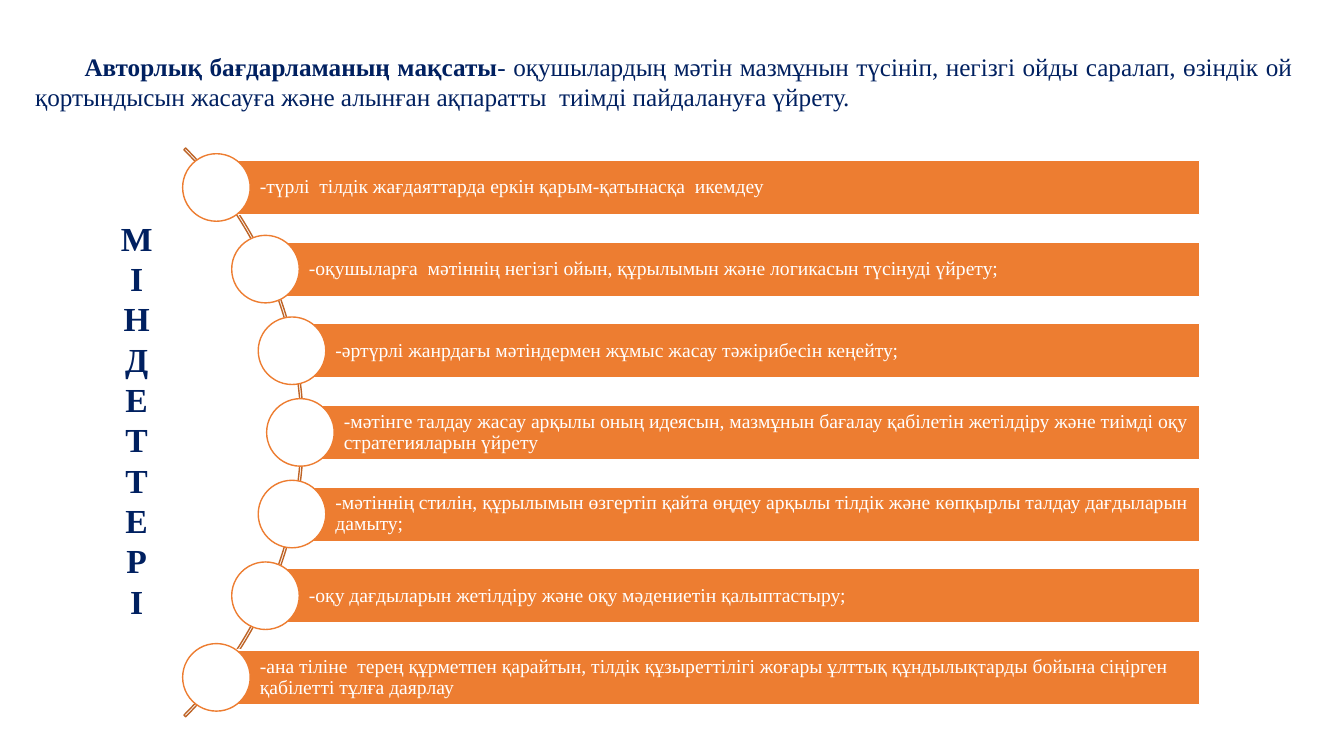
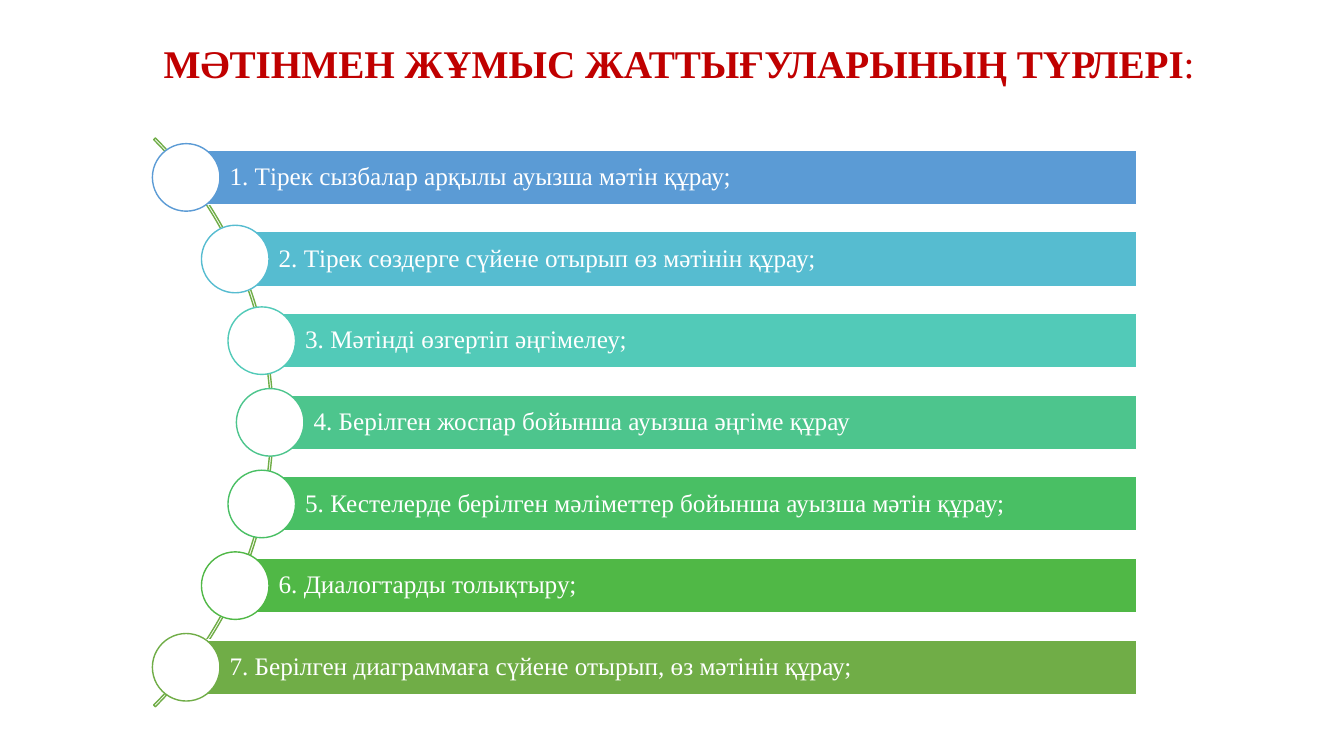
from math import sqrt

from pptx import Presentation
from pptx.dml.color import RGBColor
from pptx.enum.shapes import MSO_SHAPE
from pptx.enum.text import MSO_ANCHOR, PP_ALIGN
from pptx.util import Inches, Pt

FONT = "Times New Roman"
WHITE = RGBColor(0xFF, 0xFF, 0xFF)
NAVY = RGBColor(0x00, 0x20, 0x60)
RED = RGBColor(0xC0, 0x00, 0x00)
ORANGE = RGBColor(0xED, 0x7D, 0x31)
BROWN = RGBColor(0xBE, 0x64, 0x27)
GREEN = RGBColor(0x70, 0xAD, 0x47)
EXERCISE_COLORS = [
    RGBColor(0x5B, 0x9B, 0xD5),
    RGBColor(0x56, 0xBC, 0xD0),
    RGBColor(0x52, 0xCA, 0xB8),
    RGBColor(0x4D, 0xC5, 0x8D),
    RGBColor(0x49, 0xBF, 0x64),
    RGBColor(0x50, 0xB8, 0x46),
    GREEN,
]

ARC_SIZE = 7.98
CURVE_RADIUS = 3.96
ROW_PITCH = 0.81
BAR_HEIGHT = 0.54
CIRCLE_SIZE = 0.67

TASKS = [
    "-түрлі  тілдік жағдаяттарда еркін қарым-қатынасқа  икемдеу",
    "-оқушыларға  мәтіннің негізгі ойын, құрылымын және логикасын түсінуді үйрету;",
    "-әртүрлі жанрдағы мәтіндермен жұмыс жасау тәжірибесін кеңейту;",
    "-мәтінге талдау жасау арқылы оның идеясын, мазмұнын бағалау қабілетін "
    "жетілдіру және тиімді оқу стратегияларын үйрету",
    "-мәтіннің стилін, құрылымын өзгертіп қайта өңдеу арқылы тілдік және "
    "көпқырлы талдау дағдыларын дамыту;",
    "-оқу дағдыларын жетілдіру және оқу мәдениетін қалыптастыру;",
    "-ана тіліне  терең құрметпен қарайтын, тілдік құзыреттілігі жоғары ұлттық "
    "құндылықтарды бойына сіңірген қабілетті тұлға даярлау",
]
EXERCISES = [
    "1. Тірек сызбалар арқылы ауызша мәтін құрау;",
    "2. Тірек сөздерге сүйене отырып өз мәтінін құрау;",
    "3. Мәтінді өзгертіп әңгімелеу;",
    "4. Берілген жоспар бойынша ауызша әңгіме құрау",
    "5. Кестелерде берілген мәліметтер бойынша ауызша мәтін құрау;",
    "6. Диалогтарды толықтыру;",
    "7. Берілген диаграммаға сүйене отырып, өз мәтінін құрау;",
]


def write_paragraph(paragraph, text, *, size, color, lead="", align=PP_ALIGN.LEFT,
                    indent=0, line_spacing=1.0):
    """Write an optional bold lead and then regular text into a paragraph."""
    paragraph.alignment = align
    paragraph.line_spacing = line_spacing
    if indent:
        paragraph._p.get_or_add_pPr().set("indent", str(Inches(indent)))
    for content, bold in ((lead, True), (text, False)):
        if content:
            span = paragraph.add_run()
            span.text = content
            span.font.name = FONT
            span.font.size = Pt(size)
            span.font.bold = bold
            span.font.color.rgb = color


class SlideBuilder:
    """Hold the deck, the current page and the shared drawing style."""

    def __init__(self):
        """Start an empty widescreen deck."""
        self.deck = Presentation()
        self.deck.slide_width = Inches(13.33)
        self.deck.slide_height = Inches(7.5)
        self.page = None

    def add_page(self):
        """Begin a blank page."""
        self.page = self.deck.slides.add_slide(self.deck.slide_layouts[6])

    def add_text(self, left, top, width, height, lines, **style):
        """Add a text box with one paragraph for each (lead, text) pair."""
        box = self.page.shapes.add_textbox(
            Inches(left), Inches(top), Inches(width), Inches(height))
        frame = box.text_frame
        frame.word_wrap = True
        for index, (lead, text) in enumerate(lines):
            paragraph = frame.add_paragraph() if index else frame.paragraphs[0]
            write_paragraph(paragraph, text, lead=lead, **style)

    def add_shape(self, kind, left, top, width, height, *, line, fill=None):
        """Add a flat preset shape with a thin outline."""
        shape = self.page.shapes.add_shape(
            kind, Inches(left), Inches(top), Inches(width), Inches(height))
        shape.shadow.inherit = False
        if fill is None:
            shape.fill.background()
        else:
            shape.fill.solid()
            shape.fill.fore_color.rgb = fill
        shape.line.color.rgb = line
        shape.line.width = Pt(1)
        return shape

    def add_bar(self, left, middle, right, text, color, size):
        """Add a labelled bar with a circle over its left end."""
        bar = self.add_shape(
            MSO_SHAPE.RECTANGLE, left, middle - BAR_HEIGHT / 2,
            right - left, BAR_HEIGHT, line=WHITE, fill=color)
        frame = bar.text_frame
        frame.word_wrap = True
        frame.vertical_anchor = MSO_ANCHOR.MIDDLE
        frame.margin_left = Inches(0.43)
        frame.margin_right = frame.margin_top = frame.margin_bottom = Inches(0.04)
        write_paragraph(frame.paragraphs[0], text, size=size, color=WHITE,
                        line_spacing=0.9)
        self.add_shape(
            MSO_SHAPE.OVAL, left - CIRCLE_SIZE / 2, middle - CIRCLE_SIZE / 2,
            CIRCLE_SIZE, CIRCLE_SIZE, line=color, fill=WHITE)

    def add_curved_list(self, center_x, center_y, right, texts, colors, *, arc_color, size):
        """Add bars whose left ends follow a circular arc."""
        arc = self.add_shape(
            MSO_SHAPE.BLOCK_ARC, center_x - ARC_SIZE / 2, center_y - ARC_SIZE / 2,
            ARC_SIZE, ARC_SIZE, line=arc_color)
        for index, value in enumerate((189, 27, 0.003)):
            arc.adjustments[index] = value
        for index, (text, color) in enumerate(zip(texts, colors)):
            offset = (index - (len(texts) - 1) / 2) * ROW_PITCH
            left = center_x + sqrt(CURVE_RADIUS ** 2 - offset ** 2)
            self.add_bar(left, center_y + offset, right, text, color, size)


def main():
    """Build both slides and save the deck."""
    builder = SlideBuilder()

    builder.add_page()
    goal = ("- оқушылардың мәтін мазмұнын түсініп, негізгі ойды саралап, өзіндік ой "
            "қортындысын жасауға және алынған ақпаратты  тиімді пайдалануға үйрету.")
    builder.add_text(0.25, 0.46, 12.67, 0.71, [("Авторлық бағдарламаның мақсаты", goal)],
                     size=18, color=NAVY, align=PP_ALIGN.JUSTIFY, indent=0.49)
    builder.add_curved_list(-0.98, 4.29, 11.9, TASKS, [ORANGE] * len(TASKS),
                            arc_color=BROWN, size=14)
    builder.add_text(1.03, 2.11, 0.65, 4.14, [(letter, "") for letter in "МІНДЕТТЕРІ"],
                     size=24, color=NAVY, align=PP_ALIGN.CENTER)

    builder.add_page()
    builder.add_text(1.33, 0.34, 10.81, 0.57,
                     [("МӘТІНМЕН ЖҰМЫС ЖАТТЫҒУЛАРЫНЫҢ ТҮРЛЕРІ", ":")],
                     size=28, color=RED, align=PP_ALIGN.CENTER)
    builder.add_curved_list(-1.28, 4.19, 11.27, EXERCISES, EXERCISE_COLORS,
                            arc_color=GREEN, size=18)

    builder.deck.save("out.pptx")


if __name__ == "__main__":
    main()
